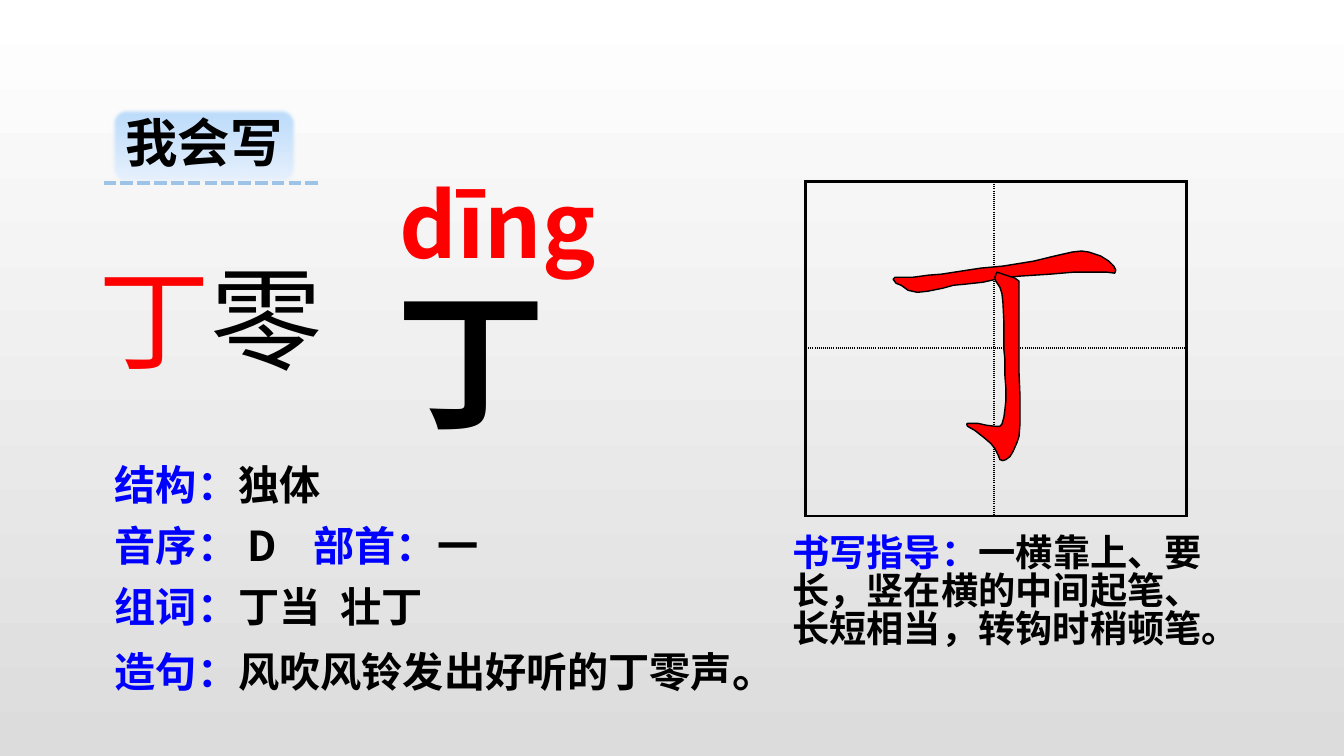
from pptx import Presentation
from pptx.dml.color import RGBColor
from pptx.enum import dml, shapes, text
from pptx.oxml.ns import qn
from pptx.util import Pt
from lxml import etree

BLACK = RGBColor(0x00, 0x00, 0x00)
RED = RGBColor(0xFF, 0x00, 0x00)
BLUE = RGBColor(0x00, 0x00, 0xFF)
WHITE = RGBColor(0xFF, 0xFF, 0xFF)
GREY = RGBColor(0xDC, 0xDC, 0xDC)
BADGE_TOP = RGBColor(0xB9, 0xDA, 0xFB)
BADGE_BOTTOM = RGBColor(0xE9, 0xF2, 0xFD)
DASH_BLUE = RGBColor(0x9D, 0xC3, 0xE6)
CHINESE = "Noto Sans CJK SC"
PINYIN = "Noto Sans CJK JP"


def write(box, pieces, size, bold=True, font=CHINESE):
    frame = box.text_frame
    frame.auto_size = text.MSO_AUTO_SIZE.NONE
    para = frame.paragraphs[0]
    para.line_spacing = 0.84
    for words, color in pieces:
        span = para.add_run()
        span.text = words
        span.font.size = Pt(size)
        span.font.bold = bold
        span.font.name = font
        span.font.color.rgb = color
        etree.SubElement(span._r.get_or_add_rPr(), qn("a:ea"), typeface=font)
    return para


def shade(fill, first, last):
    fill.gradient()
    fill.gradient_angle = 270
    for stop, color in zip(fill.gradient_stops, (first, last)):
        stop.color.rgb = color


deck = Presentation()
deck.slide_width, deck.slide_height = Pt(960), Pt(540)
page = deck.slides.add_slide(deck.slide_layouts[5])
shade(page.background.fill, WHITE, GREY)

grid = page.shapes.add_table(2, 2, Pt(575.3), Pt(129.6), Pt(272), Pt(239)).table
grid.first_row = grid.horz_banding = False
for i, (width, height) in enumerate(((135, 119), (137, 120))):
    grid.columns[i].width = Pt(width)
    grid.rows[i].height = Pt(height)
for row in range(2):
    for column in range(2):
        cell = grid.cell(row, column)
        props = cell._tc.get_or_add_tcPr()
        outer = {"lnL": column == 0, "lnR": column == 1, "lnT": row == 0, "lnB": row == 1}
        for side, thick in outer.items():
            edge = etree.SubElement(props, qn(f"a:{side}"), w=str(Pt(2.25 if thick else 1.5)))
            ink = etree.SubElement(edge, qn("a:solidFill"))
            etree.SubElement(ink, qn("a:srgbClr"), val=str(BLACK))
            etree.SubElement(edge, qn("a:prstDash"), val="solid" if thick else "sysDot")
        cell.fill.background()

horizontal_stroke = [
    (975, 280), (957, 282), (946, 283), (935, 286), (920, 289), (910, 290), (901, 288),
    (894, 283), (889, 281), (886, 277), (888, 275), (906, 275), (921, 273), (934, 272),
    (973, 266), (995, 264), (1026, 259), (1042, 255), (1055, 252), (1064, 250), (1073, 249),
    (1080, 250), (1092, 254), (1100, 259), (1105, 264), (1107, 268), (1106, 271), (1098, 270),
    (1065, 270), (1042, 272), (1011, 274), (993, 276)]
hook_stroke = [
    (997, 357), (996, 347), (996, 320), (995, 300), (994, 291), (992, 285), (988, 279),
    (987, 275), (989, 270), (998, 273), (1007, 276), (1011, 279), (1011, 370), (1012, 394),
    (1012, 420), (1011, 433), (1009, 439), (1005, 448), (1002, 453), (998, 456), (995, 457),
    (992, 456), (990, 451), (987, 445), (983, 440), (976, 434), (967, 427), (960, 423),
    (959, 421), (960, 420), (970, 420), (979, 422), (988, 423), (992, 423), (994, 421),
    (996, 414), (997, 406), (998, 397), (998, 386), (997, 373)]
for stroke in (horizontal_stroke, hook_stroke):
    builder = page.shapes.build_freeform(*stroke[0], scale=Pt(0.72))
    builder.add_line_segments(stroke[1:], close=True)
    outline = builder.convert_to_shape()
    outline.shadow.inherit = False
    outline.fill.solid()
    outline.fill.fore_color.rgb = RED
    outline.line.color.rgb = BLACK
    outline.line.width = Pt(1)

title_area = Pt(80), Pt(77.8), Pt(131.8), Pt(53.3)
badge = page.shapes.add_shape(shapes.MSO_SHAPE.ROUNDED_RECTANGLE, *title_area)
shade(badge.fill, BADGE_TOP, BADGE_BOTTOM)
badge.line.fill.background()
badge.shadow.inherit = False
effects = badge._element.spPr.find(qn("a:effectLst"))
etree.SubElement(effects, qn("a:softEdge"), rad=str(Pt(2.5)))

title = page.shapes.title
badge._element.addnext(title._element)
title.left, title.top, title.width, title.height = title_area
title.text_frame.word_wrap = False
title.text_frame.vertical_anchor = text.MSO_ANCHOR.MIDDLE
write(title, [("我会写", BLACK)], 37.4).alignment = text.PP_ALIGN.CENTER

underline = page.shapes.add_connector(
    shapes.MSO_CONNECTOR.STRAIGHT, Pt(74), Pt(131), Pt(227.5), Pt(131))
underline.line.color.rgb = DASH_BLUE
underline.line.width = Pt(3)
underline.line.dash_style = dml.MSO_LINE.SQUARE_DOT
etree.SubElement(underline._element.spPr, qn("a:effectLst"))

labels = [
    (63.4, 184.3, 214.6, 104.4, 80, False, CHINESE, None, [("丁", RED), ("零", BLACK)]),
    (558.7, 378, 328.3, 104.4, 26.6, True, CHINESE, None,
     [("书写指导：", BLUE), ("一横靠上、要长，竖在横的中间起笔、长短相当，转钩时稍顿笔。", BLACK)]),
    (275.8, 200.9, 121.7, 136.8, 106.7, True, CHINESE, None, [("丁", BLACK)]),
    (278.6, 124.6, 234, 85, 64, True, PINYIN, None, [("dīng", RED)]),
    (74.9, 328.3, 245.5, 42.5, 29.4, True, CHINESE, None, [("结构：", BLUE), ("独体", BLACK)]),
    (74.9, 371.5, 305.3, 42.5, 29.4, True, CHINESE, 142,
     [("音序：", BLUE), (" D\t", BLACK), ("部首：", BLUE), ("一", BLACK)]),
    (74.9, 415.4, 367.2, 42.5, 29.4, True, CHINESE, 161,
     [("组词：", BLUE), ("丁当\t壮丁", BLACK)]),
    (74.9, 459.4, 461.5, 81.4, 29.4, True, CHINESE, None,
     [("造句：", BLUE), ("风吹风铃发出好听的丁零声", BLACK), ("。", BLACK)]),
]
for left, top, width, height, size, bold, font, tab, pieces in labels:
    box = page.shapes.add_textbox(Pt(left), Pt(top), Pt(width), Pt(height))
    box.text_frame.word_wrap = True
    box.text_frame.margin_top = Pt(round(3.6 + 0.07 * size, 1))
    para = write(box, pieces, size, bold, font)
    if tab:
        stops = etree.SubElement(para._p.get_or_add_pPr(), qn("a:tabLst"))
        etree.SubElement(stops, qn("a:tab"), pos=str(Pt(tab)), algn="l")
para.runs[-1].font.size = Pt(32)

deck.save("out.pptx")
